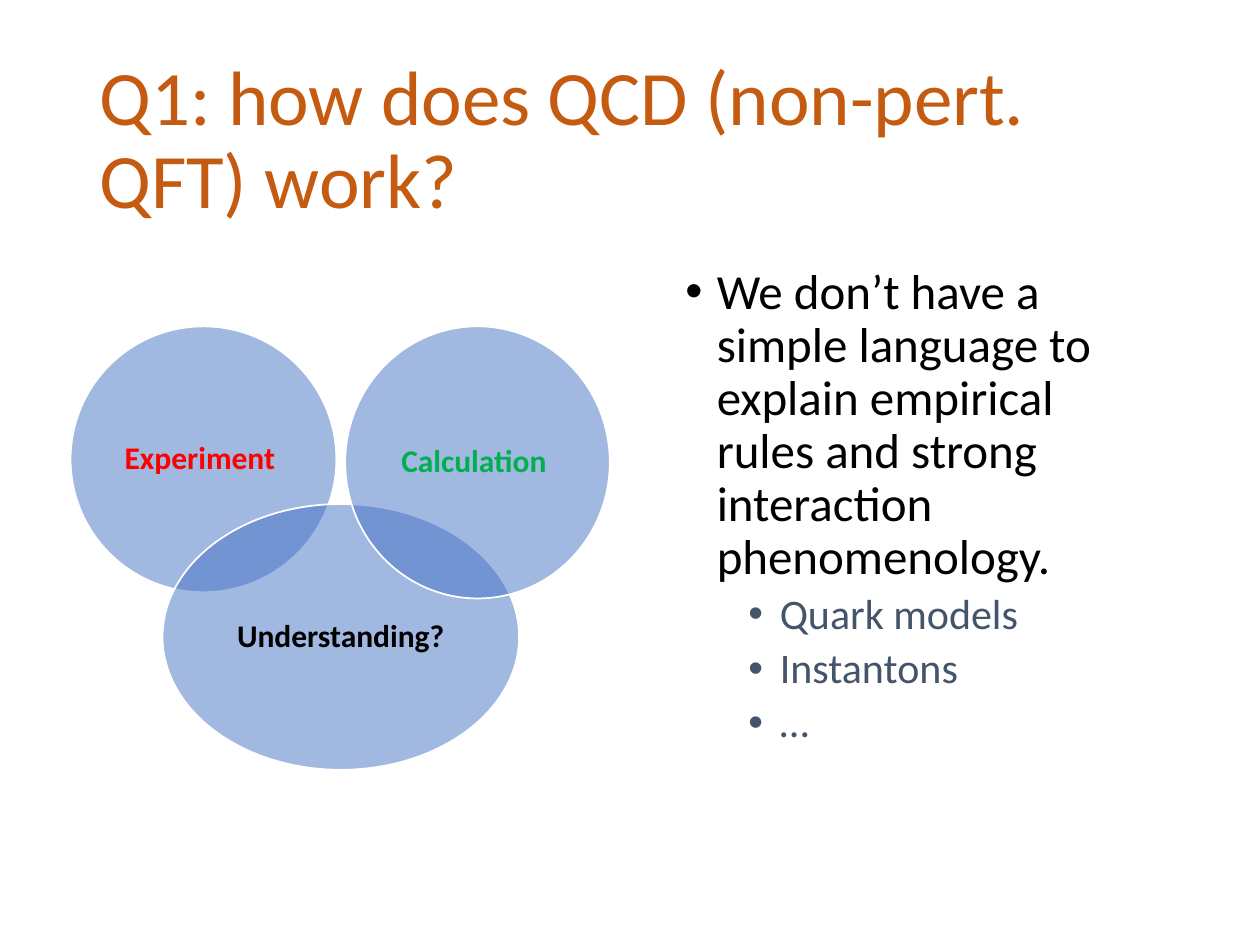
from lxml.etree import SubElement
from pptx import Presentation
from pptx.dml.color import RGBColor
from pptx.enum.shapes import MSO_SHAPE
from pptx.enum.text import MSO_ANCHOR, PP_ALIGN
from pptx.oxml.ns import qn
from pptx.util import Inches, Pt

WIDTH, HEIGHT = 10, 7.5
FONT = "Calibri"
CIRCLE_COLOR = "4472C4"

TITLE = "Q1: how does QCD (non-pert. QFT) work?"
TITLE_BOX = (0.69, 0.4, 8.62, 1.45)
BODY_BOX = (5.34, 2.07, 3.82, 4.19)
BODY = [
    (0, "We don’t have a simple language to explain empirical rules "
        "and strong interaction phenomenology."),
    (1, "Quark models"),
    (1, "Instantons"),
    (1, "…"),
]
LEVELS = [
    dict(size=28, color="000000", before=10, indent=0.25),
    dict(size=24, color="44546A", before=5, indent=0.75),
]
CIRCLES = [
    ("Experiment ", "FF0000", (0.56, 2.59, 2.11, 2.11)),
    ("Understanding?", "000000", (1.29, 4, 2.83, 2.11)),
    ("Calculation ", "00B050", (2.74, 2.59, 2.1, 2.16)),
]


def rgb(color):
    return RGBColor.from_string(color)


def write(paragraph, text, size, color, bold=False, align=PP_ALIGN.LEFT,
          before=0, level=0, indent=None):
    paragraph.alignment = align
    paragraph.line_spacing = 0.9
    paragraph.space_before = Pt(before)
    paragraph.level = level
    run = paragraph.add_run()
    run.text = text
    run.font.name = FONT
    run.font.size = Pt(size)
    run.font.bold = bold
    run.font.color.rgb = rgb(color)
    if indent is not None:
        properties = paragraph._p.get_or_add_pPr()
        properties.set("marL", str(Inches(indent)))
        properties.set("indent", str(Inches(-0.25)))
        SubElement(properties, qn("a:buFont")).set("typeface", "Arial")
        SubElement(properties, qn("a:buChar")).set("char", "•")


def add_text_frame(slide, box, anchor=MSO_ANCHOR.TOP):
    frame = slide.shapes.add_textbox(*map(Inches, box)).text_frame
    frame.word_wrap = True
    frame.vertical_anchor = anchor
    return frame


def add_circle(slide, text, color, box):
    shape = slide.shapes.add_shape(MSO_SHAPE.OVAL, *map(Inches, box))
    shape.shadow.inherit = False
    shape.fill.solid()
    shape.fill.fore_color.rgb = rgb(CIRCLE_COLOR)
    fill_color = shape._element.spPr.find(qn("a:solidFill"))[0]
    SubElement(fill_color, qn("a:alpha")).set("val", "50000")
    shape.line.color.rgb = rgb("FFFFFF")
    shape.line.width = Pt(1)
    frame = shape.text_frame
    frame.word_wrap = True
    frame.vertical_anchor = MSO_ANCHOR.MIDDLE
    frame.margin_left = frame.margin_right = Inches(0.07)
    frame.margin_top = frame.margin_bottom = Inches(0.07)
    write(frame.paragraphs[0], text, 18, color, bold=True,
          align=PP_ALIGN.CENTER)


def main():
    presentation = Presentation()
    presentation.slide_width = Inches(WIDTH)
    presentation.slide_height = Inches(HEIGHT)
    slide = presentation.slides.add_slide(presentation.slide_layouts[6])

    title = add_text_frame(slide, TITLE_BOX, MSO_ANCHOR.MIDDLE)
    write(title.paragraphs[0], TITLE, 44, "C55A11")

    body = add_text_frame(slide, BODY_BOX)
    for index, (level, text) in enumerate(BODY):
        paragraph = body.add_paragraph() if index else body.paragraphs[0]
        write(paragraph, text, level=level, **LEVELS[level])

    for circle in CIRCLES:
        add_circle(slide, *circle)

    presentation.save("out.pptx")


if __name__ == "__main__":
    main()
